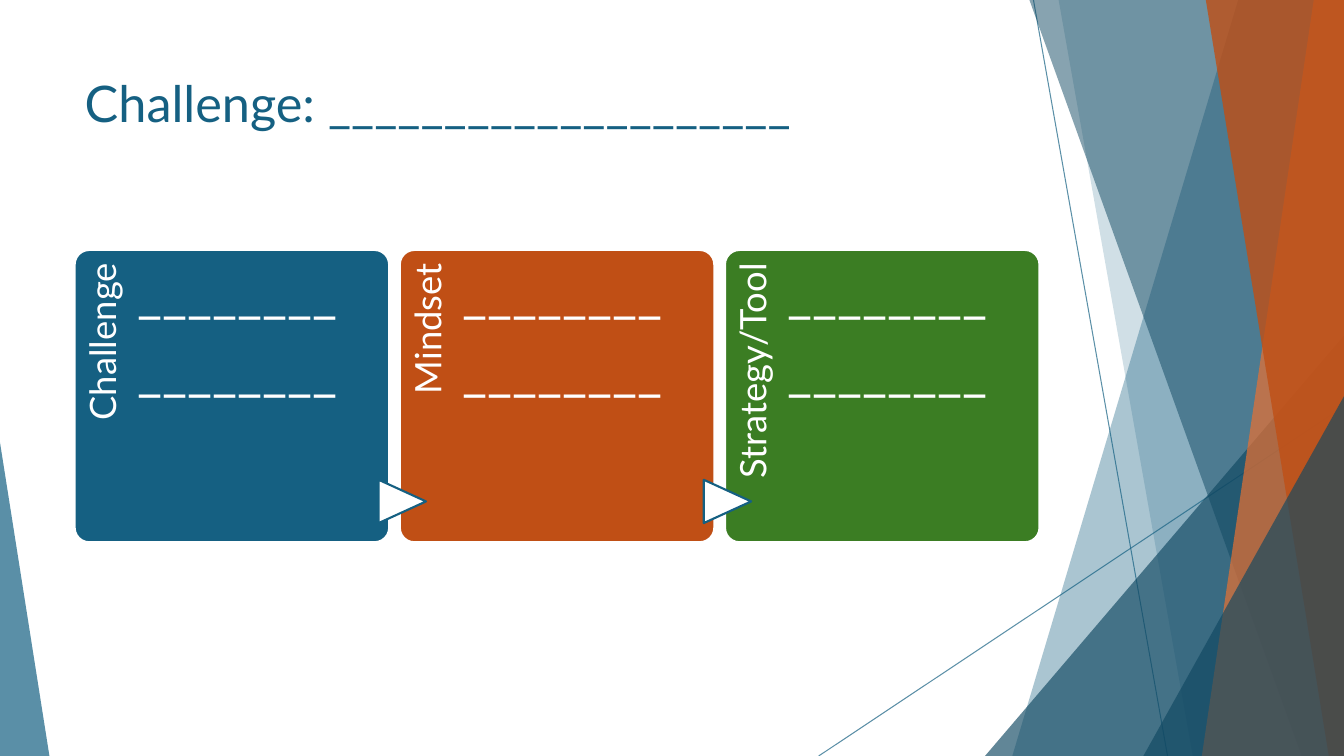
import pptx
import pptx.dml.color
import pptx.enum.shapes
import pptx.enum.text
import pptx.oxml
import pptx.oxml.ns
import pptx.util

Inches = pptx.util.Inches
Pt = pptx.util.Pt
Shapes = pptx.enum.shapes.MSO_SHAPE
Align = pptx.enum.text.PP_ALIGN

COLORS = {
    "blue": "156082",
    "navy": "104862",
    "orange": "E97132",
    "rust": "C04F15",
    "green": "3B7D23",
    "white": "FFFFFF",
}
WIDTH, HEIGHT = 13.33, 7.5
CARD_LEFT, CARD_TOP, CARD_WIDTH, CARD_HEIGHT = 0.74, 2.48, 3.12, 2.9
CARD_PITCH = 3.225
LABEL_LENGTH, LABEL_DEPTH = 2.38, 0.62
CARDS = [("Challenge", "blue"), ("Mindset", "rust"), ("Strategy/Tool", "green")]


def rgb(name):
    return pptx.dml.color.RGBColor.from_string(COLORS[name])


def write_text(frame, text, size, color, font="Lato", align=Align.LEFT,
               spacing=1.0, after=0, insets=(0.1, 0.05, 0.1, 0.05)):
    frame.word_wrap = True
    frame.auto_size = pptx.enum.text.MSO_AUTO_SIZE.NONE
    frame.vertical_anchor = pptx.enum.text.MSO_ANCHOR.TOP
    frame.margin_left, frame.margin_top, frame.margin_right, frame.margin_bottom = map(Inches, insets)
    frame.text = text
    for paragraph in frame.paragraphs:
        paragraph.alignment = align
        paragraph.line_spacing = spacing
        paragraph.space_before = Pt(0)
        paragraph.space_after = Pt(after)
        paragraph.font.name = font
        paragraph.font.size = Pt(size)
        paragraph.font.color.rgb = rgb(color)


class SlideBuilder:
    def __init__(self, slide):
        self.slide = slide
        self.shapes = slide.shapes

    def set_opacity(self, shape, percent):
        for color in shape._element.spPr.iter(pptx.oxml.ns.qn("a:srgbClr")):
            alpha = pptx.oxml.parse_xml(f'<a:alpha {pptx.oxml.ns.nsdecls("a")} val="{percent * 1000}"/>')
            color.append(alpha)

    def paint(self, shape, fill, line=None, opacity=100):
        shape.shadow.inherit = False
        shape.fill.solid()
        shape.fill.fore_color.rgb = rgb(fill)
        if line:
            shape.line.color.rgb = rgb(line)
            shape.line.width = Pt(1.5)
        else:
            shape.line.fill.background()
        if opacity < 100:
            self.set_opacity(shape, opacity)

    def title(self, text, left, top, width, height):
        shape = self.shapes.title
        shape.left, shape.top, shape.width, shape.height = map(Inches, (left, top, width, height))
        write_text(shape.text_frame, text, size=36, color="blue")

    def thin_line(self, start, end):
        line = self.shapes.add_connector(
            pptx.enum.shapes.MSO_CONNECTOR.STRAIGHT, *map(Inches, start + end))
        line.line.color.rgb = rgb("blue")
        line.line.width = Pt(0.75)
        line._element.spPr.append(pptx.oxml.parse_xml(f'<a:effectLst {pptx.oxml.ns.nsdecls("a")}/>'))
        self.set_opacity(line, 70)

    def facet(self, top_left, bottom_left, color, opacity):
        corners = [(WIDTH, 0), (WIDTH, HEIGHT), (bottom_left, HEIGHT)]
        builder = self.shapes.build_freeform(Inches(top_left), 0)
        builder.add_line_segments([(Inches(x), Inches(y)) for x, y in corners], close=True)
        self.paint(builder.convert_to_shape(), color, opacity=opacity)

    def preset(self, kind, left, top, width, height, fill, line=None,
               opacity=100, adjustment=None, rotation=0):
        shape = self.shapes.add_shape(kind, *map(Inches, (left, top, width, height)))
        if adjustment is not None:
            shape.adjustments[0] = adjustment
        shape.rotation = rotation
        self.paint(shape, fill, line, opacity)

    def corner(self, left, top, width, color, opacity, apex):
        self.preset(Shapes.ISOSCELES_TRIANGLE, left, top, width, HEIGHT - top,
                    color, opacity=opacity, adjustment=apex)

    def text(self, text, left, top, width, height, rotation=0, **text_format):
        box = self.shapes.add_textbox(*map(Inches, (left, top, width, height)))
        box.rotation = rotation
        write_text(box.text_frame, text, color="white", spacing=0.9, **text_format)

    def card(self, index, label, color):
        left = CARD_LEFT + index * CARD_PITCH
        self.preset(Shapes.ROUNDED_RECTANGLE, left, CARD_TOP, CARD_WIDTH, CARD_HEIGHT,
                    color, line="white", adjustment=0.05)
        self.text(label, left + (LABEL_DEPTH - LABEL_LENGTH) / 2,
                  CARD_TOP + (LABEL_LENGTH - LABEL_DEPTH) / 2, LABEL_LENGTH, LABEL_DEPTH,
                  rotation=270, size=26, align=Align.RIGHT, after=9.1, insets=(0, 0.1, 0.13, 0))
        if index:
            self.preset(Shapes.FLOWCHART_EXTRACT, left - 0.19, 4.74, 0.43, 0.47,
                        "white", line="blue", rotation=90)
        self.text("\n".join(["_" * 8] * 2), left + LABEL_DEPTH, CARD_TOP, 2.32, CARD_HEIGHT,
                  size=39, after=13.65, insets=(0, 0.15, 0, 0))


def main():
    presentation = pptx.Presentation()
    presentation.slide_width = Inches(WIDTH)
    presentation.slide_height = Inches(HEIGHT)
    builder = SlideBuilder(presentation.slides.add_slide(presentation.slide_layouts[5]))

    builder.thin_line((10.25, 0), (11.58, HEIGHT))
    builder.thin_line((WIDTH, 4.03), (8.12, HEIGHT))
    builder.facet(12.28, 10.04, "blue", 36)
    builder.facet(10.5, 11.83, "blue", 20)
    builder.corner(9.77, 3.33, 3.56, "navy", 66, apex=1)
    builder.facet(10.21, 12.91, "navy", 50)
    builder.facet(13.03, 11.92, "orange", 70)
    builder.facet(11.96, 13.18, "rust", 80)
    builder.corner(11.34, 3.93, 1.99, "navy", 66, apex=1)
    builder.corner(0, 4.39, 0.49, "blue", 70, apex=0)

    builder.title("Challenge: " + "_" * 20, 0.74, 0.67, 9.4, 1.44)
    for index, (label, color) in enumerate(CARDS):
        builder.card(index, label, color)

    presentation.save("out.pptx")


if __name__ == "__main__":
    main()
